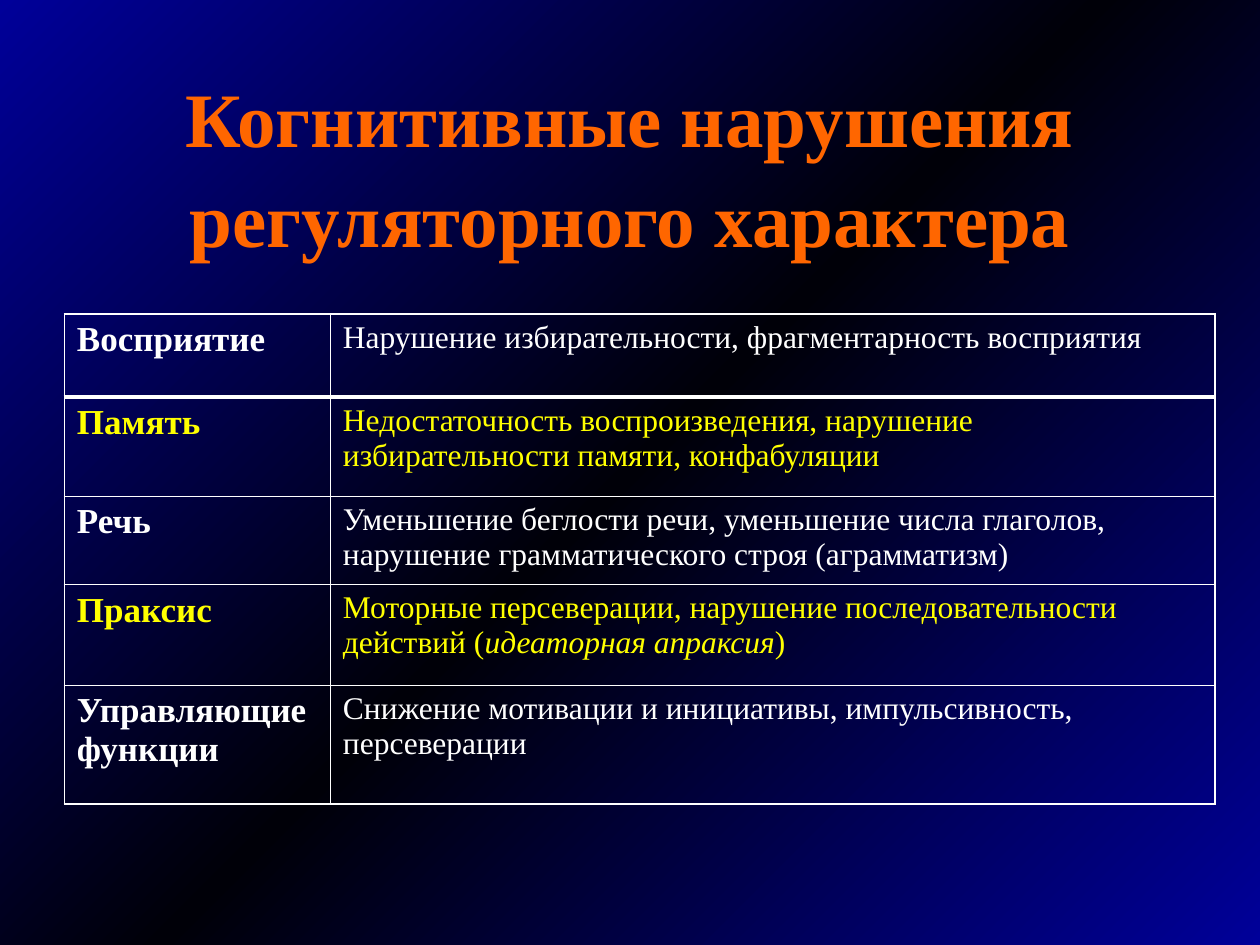
from copy import deepcopy

from lxml import etree
from pptx import Presentation
from pptx.dml.color import RGBColor
from pptx.enum.text import MSO_ANCHOR, PP_ALIGN
from pptx.oxml.ns import qn
from pptx.util import Pt

MIDDLE = MSO_ANCHOR.MIDDLE
CENTER = PP_ALIGN.CENTER

WHITE, YELLOW, ORANGE = "FFFFFF", "FFFF00", "FF6600"
BLUE, NEAR_BLACK = "000099", "000008"

DISORDERS = [
    ("Восприятие", ["Нарушение избирательности, фрагментарность восприятия"], 47.5),
    ("Память", ["Недостаточность воспроизведения, нарушение избирательности памяти, "
                "конфабуляции"], 56.7),
    ("Речь", ["Уменьшение беглости речи, уменьшение числа глаголов, нарушение "
              "грамматического строя (аграмматизм)"], 47),
    ("Праксис", ["Моторные персеверации, нарушение последовательности действий (",
                 "идеаторная апраксия", ")"], 57.6),
    ("Управляющие функции", ["Снижение мотивации и инициативы, импульсивность, "
                             "персеверации"], 67.8),
]


def color(value):
    return RGBColor.from_string(value)


class SlideBuilder:
    """Holds the type style and the current slide, and adds elements to it."""

    font_name = "Times New Roman"

    def __init__(self, slide):
        self.slide = slide

    def background(self, edge, middle):
        fill = self.slide.background.fill
        fill.gradient()
        fill.gradient_angle = 315
        for stop in fill.gradient_stops:
            stop.color.rgb = color(edge)
        stop_list = next(self.slide.element.iter(qn("a:gsLst")))
        stop_list.insert(1, deepcopy(stop_list[0]))
        for stop, position in zip(fill.gradient_stops, (0, 0.5, 1)):
            stop.position = position
        fill.gradient_stops[1].color.rgb = color(middle)

    def style(self, run, size, shade, bold=False, italic=False):
        font = run.font
        font.name, font.size = self.font_name, Pt(size)
        font.bold, font.italic = bold, italic
        font.color.rgb = color(shade)

    def title(self, text, left, top, width, height):
        frame = self.slide.shapes.add_textbox(
            Pt(left), Pt(top), Pt(width), Pt(height)).text_frame
        frame.word_wrap = True
        frame.vertical_anchor = MIDDLE
        frame.text = text
        heading = frame.paragraphs[0]
        heading.alignment = CENTER
        heading.line_spacing = 1.08
        self.style(heading.runs[0], 44, ORANGE, bold=True)

    def borders(self, cell, top, bottom):
        properties = cell._tc.get_or_add_tcPr()
        for side, weight in (("L", 1), ("R", 1), ("T", top), ("B", bottom)):
            line = etree.SubElement(properties, qn(f"a:ln{side}"), w=str(Pt(weight)))
            solid = etree.SubElement(line, qn("a:solidFill"))
            etree.SubElement(solid, qn("a:srgbClr"), val=WHITE)

    def cell(self, cell, parts, size, shade, bold, top, bottom):
        self.borders(cell, top, bottom)
        cell.fill.background()
        paragraph = cell.text_frame.paragraphs[0]
        for index, part in enumerate(parts):
            run = paragraph.add_run()
            run.text = part
            self.style(run, size, shade, bold, italic=index % 2 == 1)

    def table(self, records, left, top, widths):
        heights = [height for _, _, height in records]
        table = self.slide.shapes.add_table(
            len(records), len(widths), Pt(left), Pt(top),
            Pt(sum(widths)), Pt(sum(heights))).table
        table.first_row = table.horz_banding = False
        for column, width in zip(table.columns, widths):
            column.width = Pt(width)
        for index, (function, disorder, height) in enumerate(records):
            table.rows[index].height = Pt(height)
            shade = YELLOW if index % 2 else WHITE
            edges = (3 if index == 1 else 1, 3 if index == 0 else 1)
            self.cell(table.cell(index, 0), [function], 20, shade, True, *edges)
            self.cell(table.cell(index, 1), disorder, 18, shade, False, *edges)


def main():
    presentation = Presentation()
    presentation.slide_width, presentation.slide_height = Pt(720), Pt(540)
    builder = SlideBuilder(presentation.slides.add_slide(presentation.slide_layouts[6]))
    builder.background(BLUE, NEAR_BLACK)
    builder.title("Когнитивные нарушения регуляторного характера", 54, 48, 612, 90)
    builder.table(DISORDERS, 36.8, 179.4, (152, 505.6))
    presentation.save("out.pptx")


if __name__ == "__main__":
    main()
